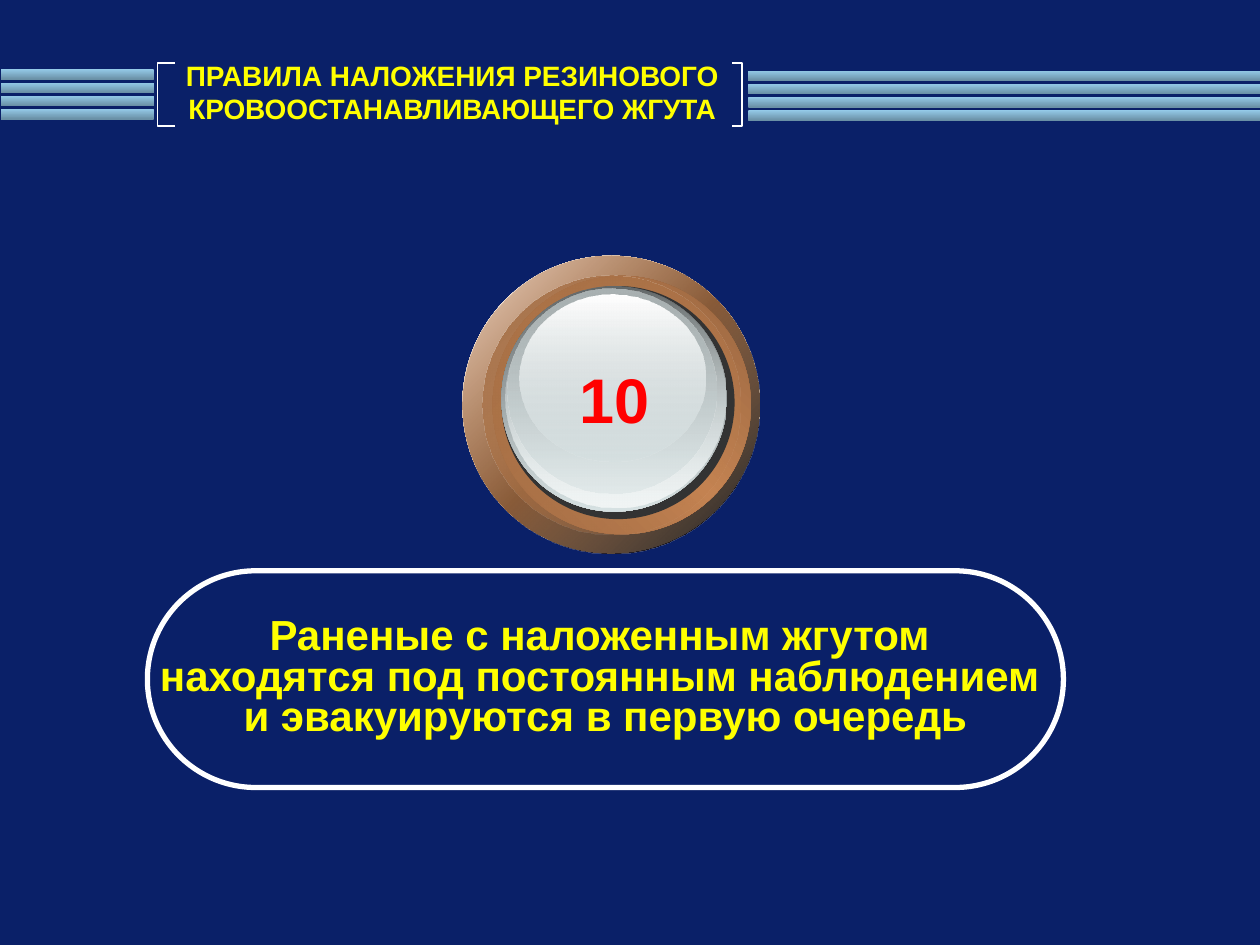
from lxml.etree import SubElement
from pptx import Presentation
from pptx.dml.color import RGBColor
from pptx.enum.shapes import MSO_SHAPE as SHAPE
from pptx.enum.text import MSO_ANCHOR as ANCHOR, PP_ALIGN
from pptx.oxml.ns import qn
from pptx.util import Inches, Pt

TITLE = "ПРАВИЛА НАЛОЖЕНИЯ РЕЗИНОВОГО КРОВООСТАНАВЛИВАЮЩЕГО ЖГУТА"
RULE = ["Раненые с наложенным жгутом ",
        "находятся под постоянным наблюдением ",
        "и эвакуируются в первую очередь"]
NUMBER = "10"

BAR_STOPS = [(0, "94CAE8"), (100, "6A90A6")]
BAR_COUNT, BAR_STEP, BAR_HEIGHT = 4, 0.105, 0.08
BAR_GROUPS = [(0.01, 0.55, 1.21), (5.94, 0.56, 4.06)]  # left, top, width
BRACKETS = [(1.39, 1.25), (5.81, 5.89)]  # open side, closed side
BRACKET_TOP, BRACKET_BOTTOM = 0.5, 1

# left, top, width, height, angle, stops of (position, colour[, opacity])
BUTTON = [
    (3.67, 2.03, 2.36, 2.36, 45, [(0, "FFFFFF"), (50, "C48352"), (100, "FFFFFF")]),
    (3.67, 2.03, 2.36, 2.36, 45, [(0, "C48352", 32), (100, "000000", 90)]),
    (3.91, 2.19, 2.05, 2.05, 315, [(0, "96643F"), (50, "C48352"), (100, "96643F")]),
    (3.83, 2.19, 2.05, 2.05, 45, [(0, "A16C43"), (100, "C48352", 0)]),
    (3.98, 2.27, 1.85, 1.85, 0, [(0, "333333")]),
    (3.98, 2.27, 1.79, 1.79, 90, [(0, "636869"), (100, "D6E1E2")]),
    (4.01, 2.28, 1.75, 1.75, 90, [(0, "D6E1E2", 0), (100, "F1F5F5")]),
    (4.03, 2.29, 1.66, 1.63, 90, [(0, "AAB2B3"), (100, "D6E1E2", 48)]),
    (4.12, 2.34, 1.48, 1.32, 90, [(0, "FFFFFF"), (100, "D6E1E2", 38)]),
]


def rgb(value):
    return RGBColor.from_string(value)


def set_fill(sp, stops, angle):
    """Fill with one colour, or with a gradient running clockwise by angle."""
    if len(stops) == 1:
        sp.fill.solid()
        sp.fill.fore_color.rgb = rgb(stops[0][1])
        return
    sp.fill.gradient()
    grad = sp._element.spPr.find(qn("a:gradFill"))
    for child in list(grad):
        grad.remove(child)
    stop_list = SubElement(grad, qn("a:gsLst"))
    for position, color, *opacity in stops:
        stop = SubElement(stop_list, qn("a:gs"), pos=str(position * 1000))
        clr = SubElement(stop, qn("a:srgbClr"), val=color)
        if opacity:
            SubElement(clr, qn("a:alpha"), val=str(opacity[0] * 1000))
    SubElement(grad, qn("a:lin"), ang=str(angle * 60000), scaled="0")


def add_filled(slide, kind, box, stops, angle):
    sp = slide.shapes.add_shape(kind, *map(Inches, box))
    sp.shadow.inherit = False
    sp.line.fill.background()
    set_fill(sp, stops, angle)


def set_outline(sp, width):
    sp.shadow.inherit = False
    sp.fill.background()
    sp.line.color.rgb = rgb("FFFFFF")
    sp.line.width = Pt(width)


def write(sp, lines, size, color="FFFF00", anchor=ANCHOR.MIDDLE, wrap=True, spacing=None):
    tf = sp.text_frame
    tf.word_wrap = wrap
    tf.vertical_anchor = anchor
    for i, line in enumerate(lines):
        p = tf.add_paragraph() if i else tf.paragraphs[0]
        p.alignment = PP_ALIGN.CENTER
        p.line_spacing = spacing
        r = p.add_run()
        r.text = line
        r.font.name = "Arial"
        r.font.size = Pt(size)
        r.font.bold = True
        r.font.color.rgb = rgb(color)


def add_text(slide, box, lines, size, **fmt):
    write(slide.shapes.add_textbox(*map(Inches, box)), lines, size, **fmt)


def main():
    prs = Presentation()
    prs.slide_width, prs.slide_height = Inches(10), Inches(7.5)
    slide = prs.slides.add_slide(prs.slide_layouts[6])
    slide.background.fill.solid()
    slide.background.fill.fore_color.rgb = rgb("0A2068")

    for left, top, width in BAR_GROUPS:
        for i in range(BAR_COUNT):
            box = (left, top + i * BAR_STEP, width, BAR_HEIGHT)
            add_filled(slide, SHAPE.RECTANGLE, box, BAR_STOPS, 90)

    for open_x, closed_x in BRACKETS:
        points = [(Inches(x), Inches(y)) for x, y in (
            (open_x, BRACKET_TOP), (closed_x, BRACKET_TOP),
            (closed_x, BRACKET_BOTTOM), (open_x, BRACKET_BOTTOM))]
        builder = slide.shapes.build_freeform(*points[0])
        builder.add_line_segments(points[1:], close=False)
        set_outline(builder.convert_to_shape(), 0.75)

    add_text(slide, (1.09, 0.42, 5, 0.62), [TITLE], 16)

    for *box, angle, stops in BUTTON:
        add_filled(slide, SHAPE.OVAL, box, stops, angle)

    frame = slide.shapes.add_shape(
        SHAPE.ROUNDED_RECTANGLE, *map(Inches, (1.17, 4.53, 7.27, 1.72)))
    frame.adjustments[0] = 0.5
    set_outline(frame, 3)
    write(frame, RULE, 24, wrap=False, spacing=0.8)

    add_text(slide, (4.38, 2.81, 1, 0.71), [NUMBER], 36, color="FF0000", anchor=ANCHOR.TOP)

    prs.save("out.pptx")


if __name__ == "__main__":
    main()
